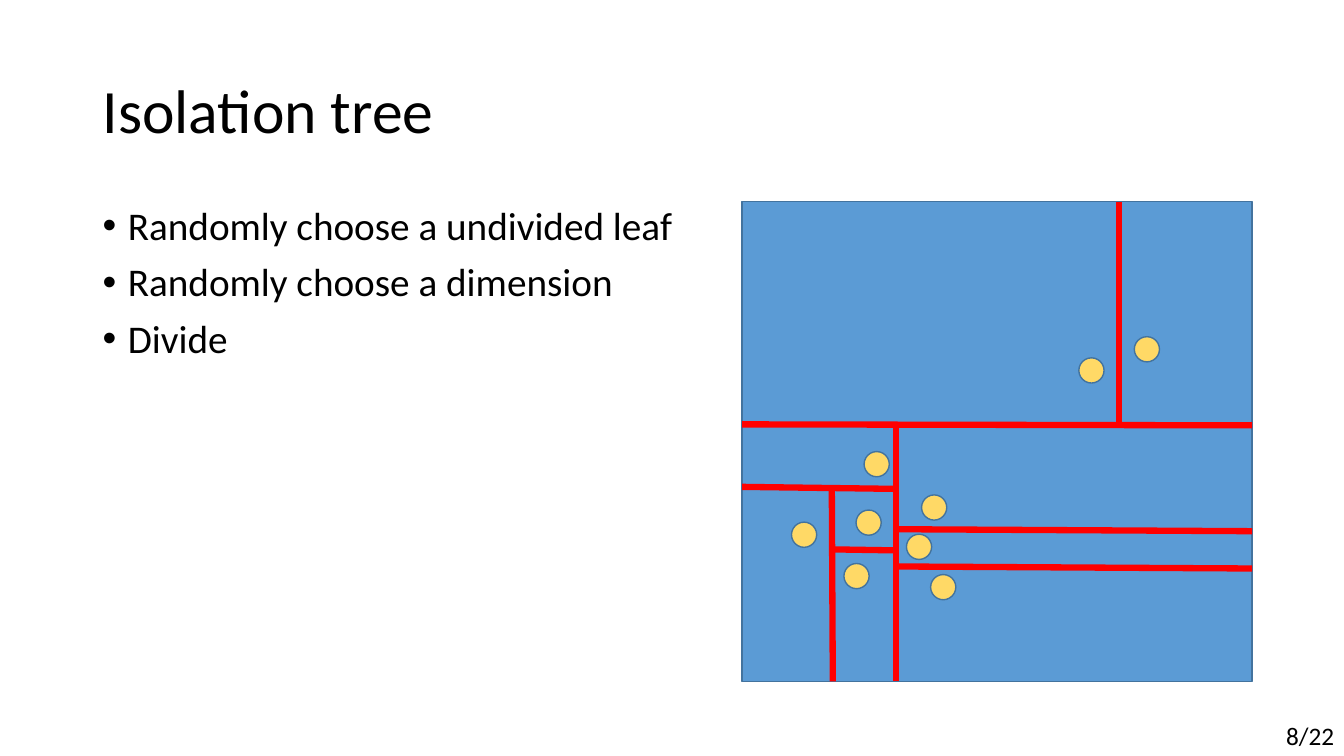
from lxml import etree
from pptx import Presentation
from pptx.dml.color import RGBColor
from pptx.enum.shapes import MSO_CONNECTOR, MSO_SHAPE
from pptx.enum.text import MSO_ANCHOR, PP_ALIGN
from pptx.oxml.ns import qn
from pptx.util import Inches, Pt

RECT, OVAL = MSO_SHAPE.RECTANGLE, MSO_SHAPE.OVAL
STRAIGHT = MSO_CONNECTOR.STRAIGHT
TOP, MIDDLE = MSO_ANCHOR.TOP, MSO_ANCHOR.MIDDLE
LEFT, RIGHT = PP_ALIGN.LEFT, PP_ALIGN.RIGHT

FONT = "Calibri"
COLORS = {
    "text": "000000",
    "space": "5B9BD5",
    "point": "FFD966",
    "outline": "43739E",
    "split": "FF0000",
}
STEPS = [
    "Randomly choose a undivided leaf",
    "Randomly choose a dimension",
    "Divide",
]
POINT_SIZE = 0.25
POINTS = [
    (1.13, 3.06), (1.63, 3.3), (1.87, 3.7),
    (1.01, 3.59), (0.49, 3.18), (3.89, 1.34),
    (3.34, 1.55), (1.21, 2.48), (1.78, 2.91),
]
SPLITS = [
    (0, 2.21, 5.06, 2.22),
    (1.53, 2.21, 1.53, 4.76),
    (3.74, 0, 3.74, 2.22),
    (1.52, 3.25, 5.06, 3.27),
    (0, 2.83, 1.52, 2.85),
    (1.52, 3.62, 5.06, 3.64),
    (0.9, 4.76, 0.89, 2.86),
    (0.88, 3.45, 1.51, 3.46),
]


def color(name):
    return RGBColor.from_string(COLORS[name])


def add_text(s, box, lines, size, anchor=TOP, align=LEFT):
    tf = s.shapes.add_textbox(*map(Inches, box)).text_frame
    tf.word_wrap = True
    tf.vertical_anchor = anchor
    tf.text = "\n".join(lines)
    for p in tf.paragraphs:
        p.alignment = align
        for r in p.runs:
            r.font.name = FONT
            r.font.size = Pt(size)
            r.font.color.rgb = color("text")
    return tf


def add_title(s, box, title):
    tf = add_text(s, box, [title], 44, MIDDLE)
    tf.paragraphs[0].line_spacing = 0.9


def add_bullets(s, box, lines):
    tf = add_text(s, box, lines, 28)
    for p in tf.paragraphs:
        p.line_spacing = 0.9
        p.space_before = Pt(10)
        pPr = p._p.get_or_add_pPr()
        pPr.set("marL", str(Inches(0.25)))
        pPr.set("indent", str(Inches(-0.25)))
        etree.SubElement(pPr, qn("a:buFont")).set("typeface", "Arial")
        etree.SubElement(pPr, qn("a:buChar")).set("char", "•")


def add_outlined(s, kind, box, fill):
    sp = s.shapes.add_shape(kind, *map(Inches, box))
    sp.shadow.inherit = False
    sp.fill.solid()
    sp.fill.fore_color.rgb = color(fill)
    sp.line.color.rgb = color("outline")
    sp.line.width = Pt(1)


def add_split(s, ends):
    line = s.shapes.add_connector(STRAIGHT, *map(Inches, ends))
    line.line.color.rgb = color("split")
    line.line.width = Pt(4.5)
    etree.SubElement(line._element.spPr, qn("a:effectLst"))


def add_partition(s, box):
    x, y = box[:2]
    add_outlined(s, RECT, box, "space")
    for dx, dy in POINTS:
        add_outlined(s, OVAL, (x + dx, y + dy, POINT_SIZE, POINT_SIZE), "point")
    for x1, y1, x2, y2 in SPLITS:
        add_split(s, (x + x1, y + y1, x + x2, y + y2))


def add_page_number(s, box, label):
    add_text(s, box, [label], 18, align=RIGHT)


def main():
    prs = Presentation()
    prs.slide_width = Inches(13.33)
    prs.slide_height = Inches(7.5)
    s = prs.slides.add_slide(prs.slide_layouts[6])
    add_title(s, (0.92, 0.4, 11.5, 1.45), "Isolation tree")
    add_bullets(s, (0.92, 2, 11.5, 4.76), STEPS)
    add_partition(s, (7.36, 2, 5.06, 4.76))
    add_page_number(s, (12.42, 7.1, 0.91, 0.4), "8/22")
    prs.save("out.pptx")


if __name__ == "__main__":
    main()
